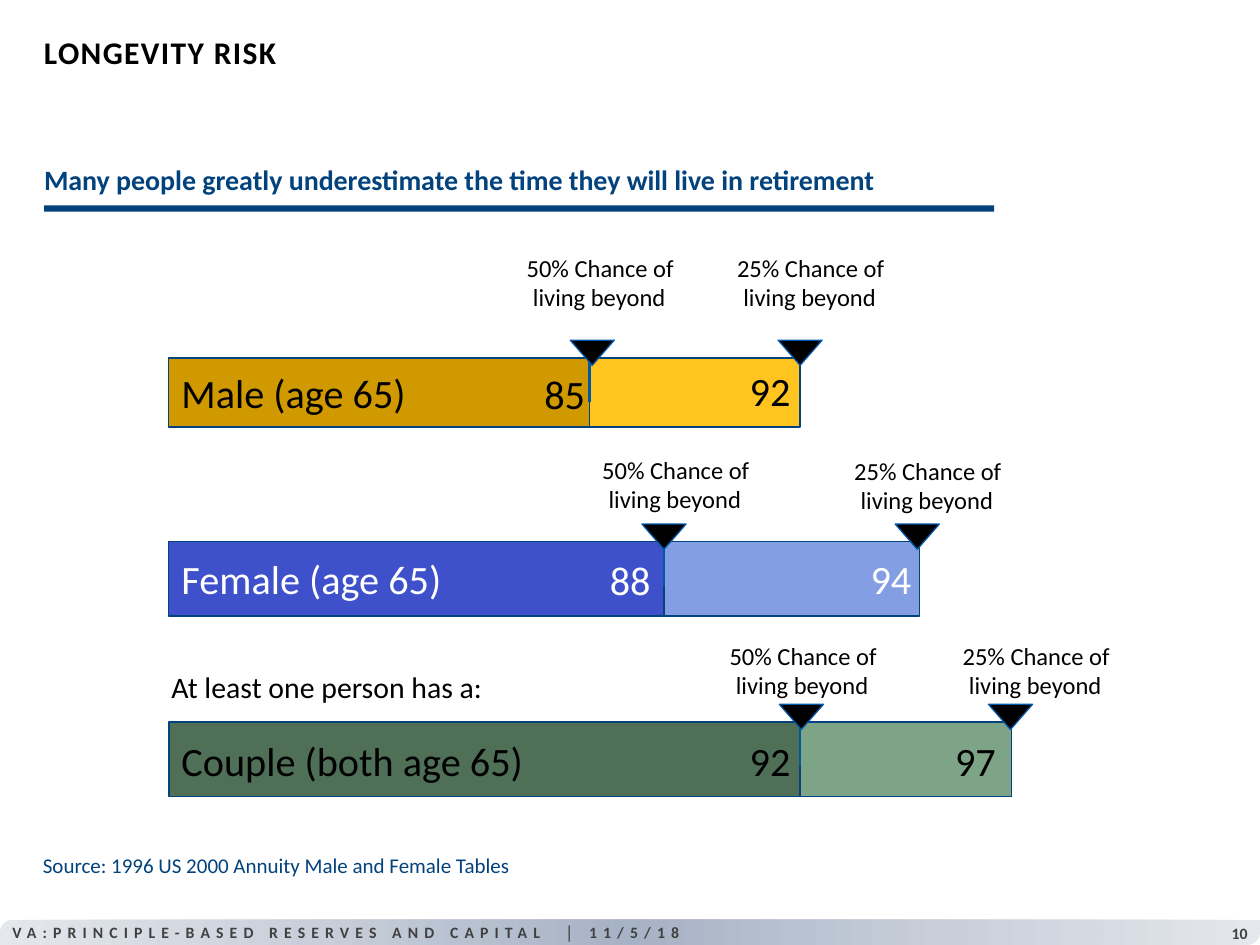
from pptx import Presentation
from pptx.dml.color import RGBColor
from pptx.enum.shapes import MSO_CONNECTOR, MSO_SHAPE
from pptx.enum.text import MSO_ANCHOR, MSO_AUTO_SIZE, PP_ALIGN
from pptx.oxml import parse_xml
from pptx.oxml.ns import nsdecls, qn
from pptx.util import Inches, Pt
from lxml.etree import SubElement

BLACK = RGBColor(0x00, 0x00, 0x00)
WHITE = RGBColor(0xFF, 0xFF, 0xFF)
NAVY = RGBColor(0x02, 0x42, 0x7D)
BLUE = RGBColor(0x02, 0x58, 0xA6)
GREY = RGBColor(0x40, 0x40, 0x40)
GOLD, YELLOW = RGBColor(0xD1, 0x99, 0x00), RGBColor(0xFF, 0xC4, 0x1F)
INDIGO, PERIWINKLE = RGBColor(0x3F, 0x50, 0xCB), RGBColor(0x83, 0x9E, 0xE3)
FOREST, SAGE = RGBColor(0x4F, 0x6F, 0x57), RGBColor(0x7E, 0xA4, 0x87)

TITLE = "LONGEVITY RISK"
HEADLINE = "Many people greatly underestimate the time they will live in retirement"
SOURCE = "Source: 1996 US 2000 Annuity Male and Female Tables"
FOOTER = "VA:PRINCIPLE-BASED RESERVES AND CAPITAL  │ 11/5/18"
PAGE = "10"
COUPLE_NOTE = "At least one person has a:"
CAPTIONS = [("50% Chance of", "living beyond"), ("25% Chance of", "living beyond")]
FOOTER_STOPS = [(0, "A6B2C5"), (50, "C8CFDA"), (100, "E4E7EC")]

# Each mark: (age, segment end, marker centre, age left, age top, caption left, caption top)
BARS = [
    dict(name="Male (age 65)", top=2.84, height=0.55, name_top=2.92, name_width=1.94,
         text=BLACK, fills=(GOLD, YELLOW),
         marks=[("85", 4.68, 4.70, 4.32, 2.93, 4.18, 2.01),
                ("92", 6.35, 6.35, 5.95, 2.91, 5.85, 2.01)]),
    dict(name="Female (age 65)", top=4.30, height=0.59, name_top=4.40, name_width=2.22,
         text=WHITE, fills=(INDIGO, PERIWINKLE),
         marks=[("88", 5.27, 5.27, 4.84, 4.41, 4.78, 3.61),
                ("94", 7.30, 7.28, 6.91, 4.40, 6.78, 3.62)]),
    dict(name="Couple (both age 65)", top=5.73, height=0.59, name_top=5.84, name_width=2.86,
         text=BLACK, fills=(FOREST, SAGE),
         marks=[("92", 6.35, 6.36, 5.95, 5.84, 5.79, 5.09),
                ("97", 8.03, 8.02, 7.58, 5.84, 7.64, 5.09)]),
]
BAR_LEFT = 1.34
MARKER_WIDTH, MARKER_HEIGHT, MARKER_RISE = 0.35, 0.2, 0.14

prs = Presentation()
prs.slide_width, prs.slide_height = Inches(10), Inches(7.5)
s = prs.slides.add_slide(prs.slide_layouts[6])


def add_text(text, x, y, w, h, size, color=BLACK, bold=False, spacing=0, padded=False,
             wrap=False, align=None, anchor=MSO_ANCHOR.TOP):
    """Add one line of text; spacing is the letter spacing in points."""
    tf = s.shapes.add_textbox(Inches(x), Inches(y), Inches(w), Inches(h)).text_frame
    tf.word_wrap = wrap
    tf.vertical_anchor = anchor
    if not padded:
        tf.margin_left = tf.margin_right = tf.margin_top = tf.margin_bottom = 0
        tf.auto_size = MSO_AUTO_SIZE.SHAPE_TO_FIT_TEXT
    tf.text = text
    p = tf.paragraphs[0]
    p.alignment = align
    r = p.runs[0]
    r.font.name, r.font.size, r.font.bold = "Calibri", Pt(size), bold
    r.font.color.rgb = color
    if spacing:
        r.font._element.set("spc", str(round(spacing * 100)))


def paint(sp, fill, line=None):
    sp.shadow.inherit = False
    sp.fill.solid()
    sp.fill.fore_color.rgb = fill
    if line is None:
        sp.line.fill.background()
    else:
        sp.line.color.rgb = line
        sp.line.width = Pt(0.75)


def add_rect(x, y, w, h, fill, line=None):
    paint(s.shapes.add_shape(MSO_SHAPE.RECTANGLE, Inches(x), Inches(y), Inches(w), Inches(h)),
          fill, line)


def add_marker(center, top):
    half = MARKER_WIDTH / 2
    builder = s.shapes.build_freeform(Inches(center - half), Inches(top))
    builder.add_line_segments([(Inches(center), Inches(top + MARKER_HEIGHT)),
                               (Inches(center + half), Inches(top))], close=True)
    paint(builder.convert_to_shape(), BLACK, BLUE)


def add_divider(x, top):
    c = s.shapes.add_connector(MSO_CONNECTOR.STRAIGHT, Inches(x), Inches(top),
                               Inches(x), Inches(top + 0.35))
    c.line.color.rgb = BLUE
    c.line.width = Pt(1.38)
    SubElement(c._element.spPr, qn("a:effectLst"))


def add_footer_band():
    band = s.shapes.add_shape(MSO_SHAPE.ROUND_2_DIAG_RECTANGLE, 0, Inches(7.3),
                              Inches(10), Inches(0.2))
    band.adjustments[0], band.adjustments[1] = 0.5, 0
    band.shadow.inherit = False
    band.line.fill.background()
    stops = "".join(f'<a:gs pos="{pos * 1000}"><a:srgbClr val="{color}"/></a:gs>'
                    for pos, color in FOOTER_STOPS)
    gradient = parse_xml(
        f'<a:gradFill {nsdecls("a")} rotWithShape="1"><a:gsLst>{stops}</a:gsLst>'
        '<a:path path="circle"><a:fillToRect l="50000" t="50000" r="50000" b="50000"/>'
        '</a:path></a:gradFill>')
    band._element.spPr.find(qn("a:prstGeom")).addnext(gradient)


def add_bar(bar):
    top, height = bar["top"], bar["height"]
    split, end = (mark[1] for mark in bar["marks"])
    add_rect(split, top, end - split, height, bar["fills"][1], NAVY)
    add_rect(BAR_LEFT, top, split - BAR_LEFT, height, bar["fills"][0], NAVY)
    add_text(bar["name"], BAR_LEFT + 0.1, bar["name_top"], bar["name_width"], 0.48, 23,
             bar["text"])
    add_divider(split, top)
    for mark, (chance, beyond) in zip(bar["marks"], CAPTIONS):
        age, _, center, age_x, age_y, x, y = mark
        add_text(chance, x, y, 1.34, 0.31, 14)
        add_text(beyond, x + 0.05, y + 0.23, 1.17, 0.31, 14)
        add_marker(center, top - MARKER_RISE)
        add_text(age, age_x, age_y, 0.5, 0.48, 23, bar["text"])


add_footer_band()
add_text(PAGE, 9.58, 7.28, 0.42, 0.25, 9, GREY, bold=True, padded=True, wrap=True,
         align=PP_ALIGN.RIGHT)
add_text(FOOTER, 0, 7.27, 8.92, 0.25, 9, GREY, bold=True, spacing=3.5, padded=True, wrap=True)
add_text(HEADLINE, 0.35, 1.29, 8.8, 0.27, 16, NAVY, bold=True, wrap=True)
add_rect(0.35, 1.63, 7.54, 0.05, NAVY)
add_text(TITLE, 0.25, 0, 9.75, 0.83, 18, bold=True, spacing=0.8, padded=True, wrap=True,
         anchor=MSO_ANCHOR.MIDDLE)
add_text(SOURCE, 0.34, 6.77, 3.85, 0.26, 12, NAVY)
for bar in BARS:
    add_bar(bar)
add_text(COUPLE_NOTE, 1.36, 5.31, 2.72, 0.36, 17)

prs.save("out.pptx")
